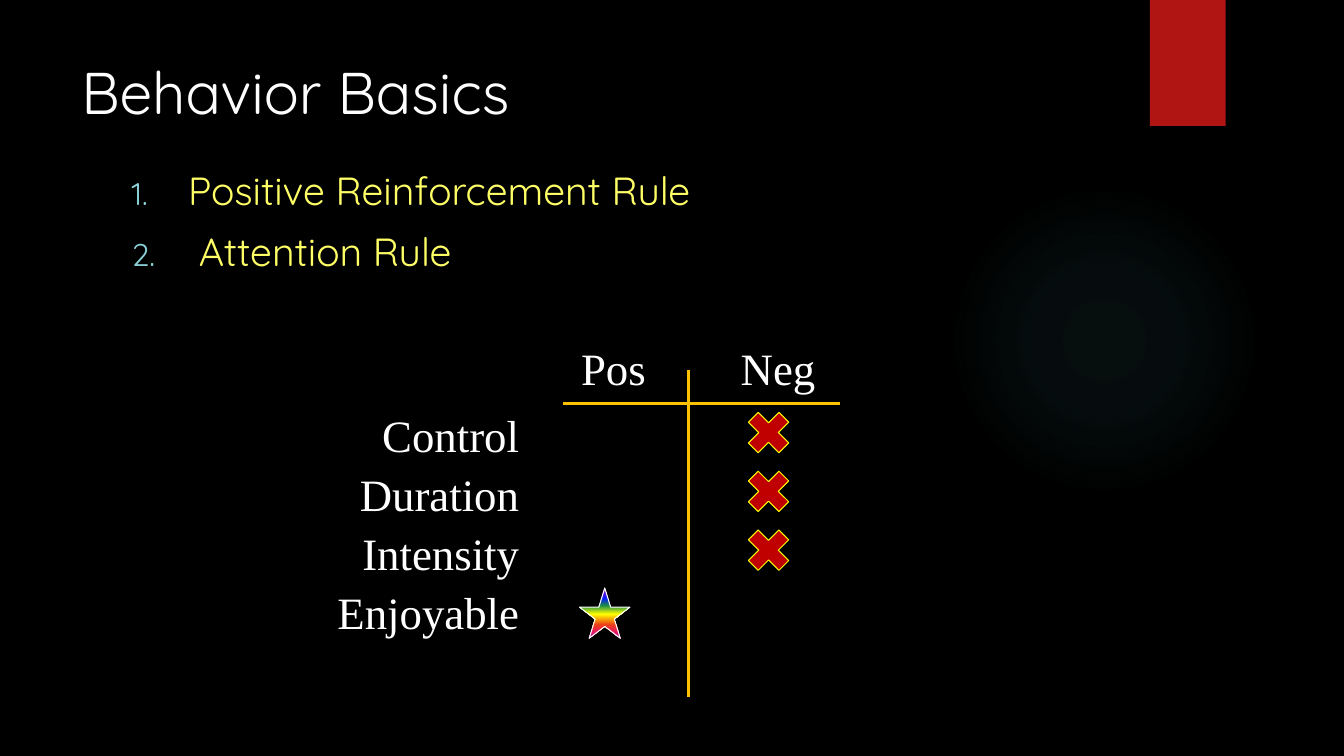
import pptx
import pptx.dml.color
import pptx.enum.shapes
import pptx.enum.text
import pptx.oxml
import pptx.oxml.ns
import pptx.util
from dataclasses import dataclass
from typing import NamedTuple

CELL = pptx.util.Inches(1) // 12
COLUMNS, ROWS = 160, 90
SHAPES = pptx.enum.shapes.MSO_SHAPE
ALIGN = pptx.enum.text.PP_ALIGN
NAMESPACE = pptx.oxml.ns.nsdecls("a")


@dataclass(frozen=True)
class Theme:
    background: str = "000000"
    text: str = "FFFFFF"
    rule: str = "FFFF66"
    number: str = "8AD0D6"
    glow: str = "50B9C1"
    ribbon: str = "B01513"
    axis: str = "FFC000"
    cross: str = "C00000"
    cross_edge: str = "FFFF00"
    rainbow: tuple = ((0, "A603AB"), (21, "0819FB"), (35, "1A8D48"), (52, "FFFF00"),
                      (73, "EE3F17"), (88, "E81766"), (100, "A603AB"))
    main_font: str = "Quicksand"
    chart_font: str = "Times New Roman"
    title_size: int = 42
    rule_size: int = 28
    chart_size: int = 32


THEME = Theme()


class Box(NamedTuple):
    """An area in grid cells."""
    left: float
    top: float
    width: float
    height: float

    def inner(self, left, top, width, height):
        return Box(self.left + left, self.top + top, width, height)

    def emu(self):
        return [round(length * CELL) for length in self]


def rgb(color):
    return pptx.dml.color.RGBColor.from_string(color)


def add_text(slide, box, lines, font, size, color, align=ALIGN.LEFT, grow=False):
    frame = slide.shapes.add_textbox(*box.emu()).text_frame
    frame.word_wrap = True
    if grow:
        frame.auto_size = pptx.enum.text.MSO_AUTO_SIZE.SHAPE_TO_FIT_TEXT
    for index, line in enumerate(lines):
        paragraph = frame.add_paragraph() if index else frame.paragraphs[0]
        paragraph.alignment = align
        run = paragraph.add_run()
        run.text = line
        run.font.name = font
        run.font.size = pptx.util.Pt(size)
        run.font.color.rgb = rgb(color)
    return frame


def add_figure(slide, kind, box, fill=None, edge=None):
    figure = slide.shapes.add_shape(kind, *box.emu())
    figure.shadow.inherit = False
    if fill:
        figure.fill.solid()
        figure.fill.fore_color.rgb = rgb(fill)
    if edge:
        figure.line.color.rgb = rgb(edge)
        figure.line.width = pptx.util.Pt(0.75)
    else:
        figure.line.fill.background()
    return figure


def set_gradient(figure, stops, direction):
    """Fill with (position, colour, opacity) stops, all in percent."""
    marks = "".join(
        f'<a:gs pos="{position * 1000}"><a:srgbClr val="{color}">'
        f'<a:alpha val="{opacity * 1000}"/></a:srgbClr></a:gs>'
        for position, color, opacity in stops)
    gradient = pptx.oxml.parse_xml(
        f'<a:gradFill {NAMESPACE} rotWithShape="1"><a:gsLst>{marks}</a:gsLst>'
        f'{direction}</a:gradFill>')
    geometry = figure.element.spPr.find(pptx.oxml.ns.qn("a:prstGeom"))
    geometry.addnext(gradient)


def add_axis(slide, left, top, right, bottom):
    ends = [round(length * CELL) for length in (left, top, right, bottom)]
    axis = slide.shapes.add_connector(pptx.enum.shapes.MSO_CONNECTOR.STRAIGHT, *ends)
    axis.line.color.rgb = rgb(THEME.axis)
    axis.line.width = pptx.util.Pt(2)
    axis.element.spPr.append(pptx.oxml.parse_xml(f"<a:effectLst {NAMESPACE}/>"))


def draw_backdrop(slide, box):
    slide.background.fill.solid()
    slide.background.fill.fore_color.rgb = rgb(THEME.background)
    glow = add_figure(slide, SHAPES.OVAL, box.inner(112.9, 22, 37, 37))
    set_gradient(glow, [(0, THEME.glow, 7), (36, THEME.glow, 6), (69, THEME.glow, 0)],
                 '<a:path path="circle"><a:fillToRect l="50000" t="50000" '
                 'r="50000" b="50000"/></a:path>')
    add_figure(slide, SHAPES.RECTANGLE, box.inner(136.9, 0, 9, 15), THEME.ribbon)


def draw_rules(slide, box, rules):
    frame = add_text(slide, box, rules, THEME.main_font, THEME.rule_size, THEME.rule)
    indent = pptx.util.Inches(0.56)
    for index, paragraph in enumerate(frame.paragraphs):
        properties = paragraph._p.get_or_add_pPr()
        properties.set("marL", str(indent))
        properties.set("indent", str(-indent))
        for bullet in (f'<a:buClr {NAMESPACE}><a:srgbClr val="{THEME.number}"/></a:buClr>',
                       f'<a:buSzPct {NAMESPACE} val="80000"/>',
                       f'<a:buFont {NAMESPACE} typeface="+mj-lt"/>',
                       f'<a:buAutoNum {NAMESPACE} type="arabicPeriod"/>'):
            properties.append(pptx.oxml.parse_xml(bullet))
        if index:
            paragraph.space_before = pptx.util.Pt(10)


def draw_behavior_chart(slide, box, traits):
    """Draw the T-chart; each trait is (name, label width, is positive)."""
    header, row_height, label_right = 8, 7, 26
    label_height, cross_size, star_size = 7.7, 7, 6

    def add_label(text, place, align=ALIGN.LEFT):
        add_text(slide, place, [text], THEME.chart_font, THEME.chart_size,
                 THEME.text, align, grow=True)

    axis_top = box.top + header
    add_axis(slide, box.left + 30, axis_top, box.left + 63, axis_top)
    add_axis(slide, box.left + 45, box.top + 4, box.left + 45, box.top + box.height)
    add_label("Pos", box.inner(31, 0, 11, label_height))
    add_label("Neg", box.inner(50, 0, 14, label_height))

    for index, (trait, width, positive) in enumerate(traits):
        top = header + index * row_height
        add_label(trait, box.inner(label_right - width, top, width, label_height),
                  ALIGN.RIGHT)
        if positive:
            place = box.inner(32, top + row_height - star_size, star_size, star_size)
            star = add_figure(slide, SHAPES.STAR_5_POINT, place, edge=THEME.text)
            set_gradient(star, [(*stop, 100) for stop in THEME.rainbow],
                         '<a:lin ang="5400000" scaled="0"/>')
        else:
            add_figure(slide, SHAPES.MATH_MULTIPLY,
                       box.inner(51, top, cross_size, cross_size),
                       THEME.cross, THEME.cross_edge)


def build_behavior_slide(deck):
    slide = deck.slides.add_slide(deck.slide_layouts[6])
    page = Box(0, 0, COLUMNS, ROWS)
    draw_backdrop(slide, page)
    add_text(slide, page.inner(8.5, 6, 123.5, 18.4), ["Behavior Basics"],
             THEME.main_font, THEME.title_size, THEME.text)
    draw_rules(slide, page.inner(14.5, 19.2, 124.3, 62.8),
               ["Positive Reinforcement Rule", " Attention Rule"])
    draw_behavior_chart(slide, page.inner(37, 40, 64, 43),
                        [("Control", 23, False), ("Duration", 23, False),
                         ("Intensity", 23, False), ("Enjoyable", 26, True)])


def main():
    deck = pptx.Presentation()
    deck.slide_width = COLUMNS * CELL
    deck.slide_height = ROWS * CELL
    build_behavior_slide(deck)
    deck.save("out.pptx")


if __name__ == "__main__":
    main()
